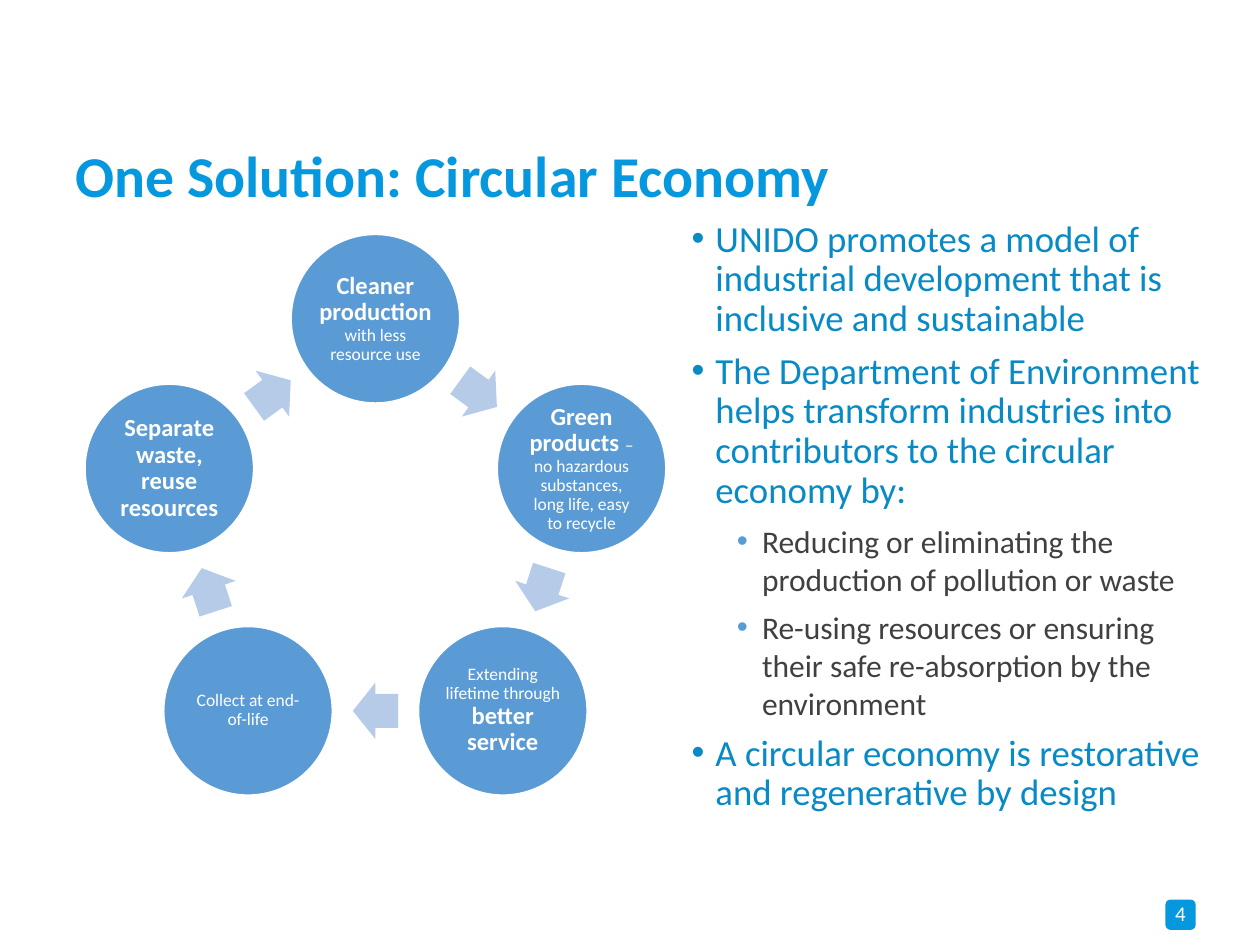
from math import cos, pi, sin

from lxml.etree import SubElement
from pptx import Presentation
from pptx.dml.color import RGBColor
from pptx.enum.shapes import MSO_SHAPE as Shape
from pptx.enum.text import MSO_ANCHOR as Anchor, PP_ALIGN as Align
from pptx.oxml.ns import qn
from pptx.util import Inches, Pt

SKY = RGBColor(0x06, 0x98, 0xDF)
OCEAN = RGBColor(0x07, 0x8A, 0xC5)
STEEL = RGBColor(0x5B, 0x9B, 0xD5)
PALE = RGBColor(0xB5, 0xCB, 0xE7)
CHARCOAL = RGBColor(0x40, 0x40, 0x40)
WHITE = RGBColor(0xFF, 0xFF, 0xFF)

# Run formats
TITLE = {"size": Pt(33), "bold": True, "color": SKY}
POINT = {"size": Pt(21), "color": OCEAN}
DETAIL = {"size": Pt(18), "color": CHARCOAL}
STRONG = {"size": Pt(14), "bold": True, "color": WHITE}
SMALL = {"size": Pt(10), "bold": False, "color": WHITE}
NUMBER = {"size": Pt(12), "color": WHITE}

# Bullet levels: text indent, hanging width, bullet colour, run and paragraph format
LEVELS = [
    (0.19, 0.19, OCEAN, POINT, {"line_spacing": 0.9, "space_before": Pt(7.5)}),
    (0.56, 0.2, STEEL, DETAIL, {"space_before": Pt(6), "level": 1}),
]
CENTRED = {"alignment": Align.CENTER, "line_spacing": 0.9}


class SlideWriter:
    font_name = "Calibri"

    def __init__(self, slide):
        self.slide = slide

    def apply(self, target, values):
        for name, value in values.items():
            setattr(target, name, value)

    def add_run(self, paragraph, text, style):
        run = paragraph.add_run()
        run.text = text
        for name, value in style.items():
            if name == "color":
                run.font.color.rgb = value
            else:
                setattr(run.font, name, value)
        run.font.name = self.font_name

    def text_box(self, left, top, width, height, anchor=Anchor.TOP):
        frame = self.slide.shapes.add_textbox(
            Inches(left), Inches(top), Inches(width), Inches(height)).text_frame
        self.apply(frame, {"word_wrap": True, "vertical_anchor": anchor})
        return frame

    def shape(self, kind, center_x, center_y, width, height, fill, outline=None):
        shape = self.slide.shapes.add_shape(
            kind, Inches(center_x - width / 2), Inches(center_y - height / 2),
            Inches(width), Inches(height))
        shape.shadow.inherit = False
        shape.fill.solid()
        shape.fill.fore_color.rgb = fill
        if outline is None:
            shape.line.fill.background()
        else:
            shape.line.color.rgb = outline
            shape.line.width = Pt(1)
        return shape

    def label(self, shape, runs, inset):
        frame = shape.text_frame
        self.apply(frame, {"word_wrap": True, "vertical_anchor": Anchor.MIDDLE})
        for side in ("left", "right", "top", "bottom"):
            setattr(frame, f"margin_{side}", Inches(inset))
        paragraph = frame.paragraphs[0]
        self.apply(paragraph, CENTRED)
        for text, style in runs:
            self.add_run(paragraph, text, style)

    def title(self, text):
        frame = self.text_box(0.5, 0.82, 8.64, 1.2, Anchor.MIDDLE)
        frame.paragraphs[0].line_spacing = 0.9
        self.add_run(frame.paragraphs[0], text, TITLE)

    def bullets(self, items):
        frame = self.text_box(5.39, 1.7, 4.33, 5.2)
        for index, (level, text) in enumerate(items):
            indent, hanging, color, style, spacing = LEVELS[level]
            paragraph = frame.add_paragraph() if index else frame.paragraphs[0]
            props = paragraph._p.get_or_add_pPr()
            props.set("marL", str(Inches(indent)))
            props.set("indent", str(-Inches(hanging)))
            bullet_color = SubElement(props, qn("a:buClr"))
            SubElement(bullet_color, qn("a:srgbClr"), val=str(color))
            SubElement(props, qn("a:buFont"), typeface="Arial")
            SubElement(props, qn("a:buChar"), char="•")
            self.apply(paragraph, spacing)
            if index == 0:
                paragraph.space_before = Pt(0)
            self.add_run(paragraph, text, style)

    def cycle(self, stages, center_x, center_y, radius):
        step = 2 * pi / len(stages)

        def ring_point(position, distance):
            angle = position * step
            return (center_x + distance * sin(angle),
                    center_y - distance * cos(angle))

        for index, runs in enumerate(stages):
            stage = self.shape(Shape.OVAL, *ring_point(index, radius),
                               1.34, 1.34, STEEL, WHITE)
            self.label(stage, runs, 0.02)
            # Each arrow sits halfway to the next stage
            arrow = self.shape(Shape.RIGHT_ARROW,
                               *ring_point(index + 0.5, radius * cos(step / 2)),
                               0.36, 0.45, PALE)
            arrow.adjustments[0] = 0.6
            arrow.adjustments[1] = 0.5
            arrow.rotation = (index + 0.5) * 360 / len(stages)

    def page_number(self, text):
        badge = self.shape(Shape.ROUNDED_RECTANGLE, 9.37, 7.26, 0.24, 0.24, SKY)
        self.label(badge, [(text, NUMBER)], 0)


def main():
    deck = Presentation()
    deck.slide_width, deck.slide_height = Inches(10), Inches(7.5)
    writer = SlideWriter(deck.slides.add_slide(deck.slide_layouts[6]))

    writer.page_number("4")
    writer.title("One Solution: Circular Economy")

    # Explanation on the right
    writer.bullets([
        (0, "UNIDO promotes a model of industrial development that is "
            "inclusive and sustainable"),
        (0, "The Department of Environment helps transform industries into "
            "contributors to the circular economy by:"),
        (1, "Reducing or eliminating the production of pollution or waste"),
        (1, "Re-using resources or ensuring their safe re-absorption by the "
            "environment"),
        (0, "A circular economy is restorative and regenerative by design"),
    ])

    # Cycle on the left, clockwise from the top
    writer.cycle([
        [("Cleaner production ", STRONG), ("with less resource use", SMALL)],
        [("Green products ", STRONG),
         ("– no hazardous substances, long life, easy to recycle", SMALL)],
        [("Extending lifetime through ", SMALL), ("better service", STRONG)],
        [("Collect at end-of-life", SMALL)],
        [("Separate waste, reuse resources", STRONG)],
    ], center_x=2.98, center_y=4.25, radius=1.72)

    deck.save("out.pptx")


if __name__ == "__main__":
    main()
